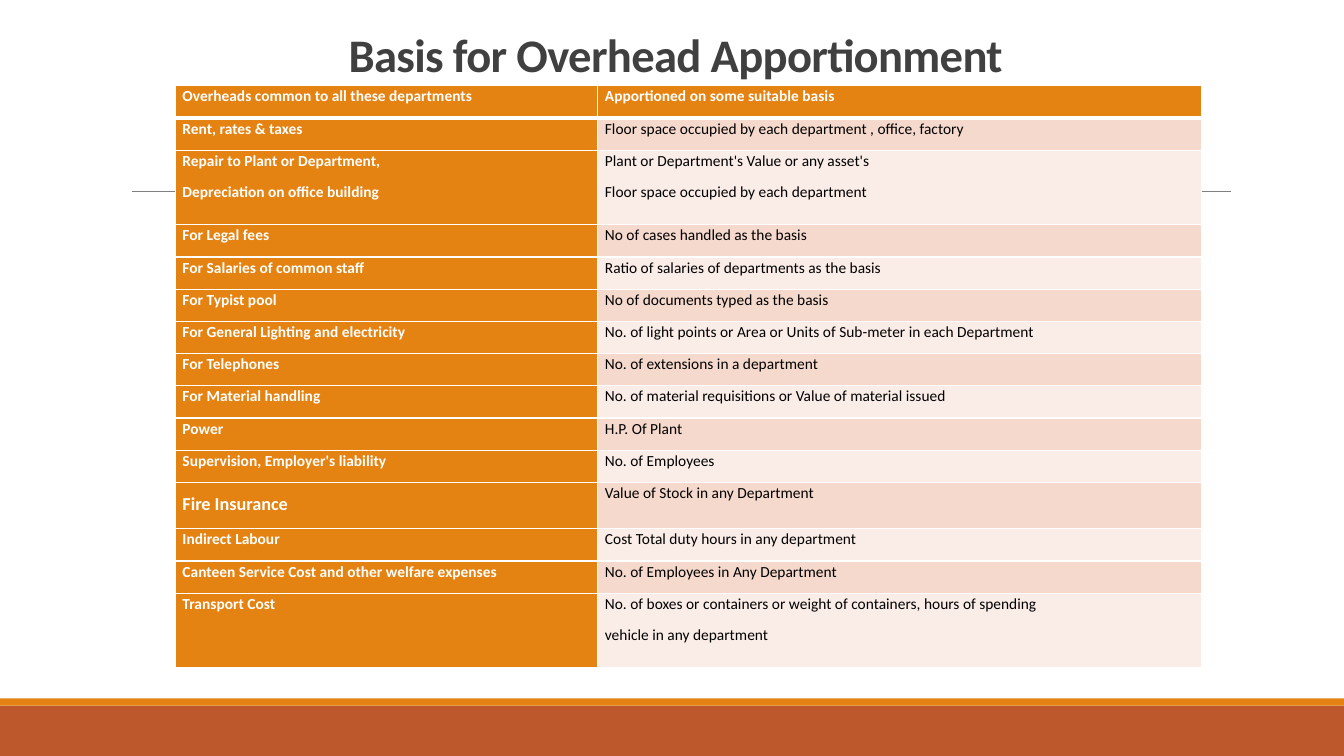
import pptx
import pptx.util
import pptx.dml.color
import pptx.enum.shapes
import pptx.enum.text
import pptx.oxml
import pptx.oxml.ns
import lxml.etree

Inches = pptx.util.Inches
Pt = pptx.util.Pt
PP_ALIGN = pptx.enum.text.PP_ALIGN
qn = pptx.oxml.ns.qn

COLORS = {
    "orange": "E48312", "rust": "BD582C", "rule": "808080", "title": "404040",
    "white": "FFFFFF", "black": "000000", "dark band": "F5D9CC", "light band": "FAEDE7",
}
FONT = "Calibri"

# Each row: height, left paragraphs, right paragraphs
ROWS = [
    (0.32, ["Overheads common to all these departments"], ["Apportioned on some suitable basis"]),
    (0.32, ["Rent, rates & taxes"], ["Floor space occupied by each department , office, factory"]),
    (0.74, ["Repair to Plant or Department,", "Depreciation on office building"],
     ["Plant or Department's Value or any asset's", "Floor space occupied by each department"]),
    (0.32, ["For Legal fees"], ["No of cases handled as the basis"]),
    (0.32, ["For Salaries of common staff"], ["Ratio of salaries of departments as the basis"]),
    (0.32, ["For Typist pool"], ["No of documents typed as the basis"]),
    (0.32, ["For General Lighting and electricity"],
     ["No. of light points or Area or Units of Sub-meter in each Department"]),
    (0.32, ["For Telephones"], ["No. of extensions in a department"]),
    (0.32, ["For Material handling"], ["No. of material requisitions or Value of material issued"]),
    (0.32, ["Power"], ["H.P. Of Plant"]),
    (0.32, ["Supervision, Employer's liability"], ["No. of Employees"]),
    (0.46, ["Fire Insurance"], ["Value of Stock in any Department"]),
    (0.32, ["Indirect Labour"], ["Cost Total duty hours in any department"]),
    (0.32, ["Canteen Service Cost and other welfare expenses"], ["No. of Employees in Any Department"]),
    (0.74, ["Transport Cost"],
     ["No. of boxes or containers or weight of containers, hours of spending",
      "vehicle in any department"]),
]


def rgb(name):
    return pptx.dml.color.RGBColor.from_string(COLORS[name])


def add_run(paragraph, text, size, color, bold):
    run = paragraph.add_run()
    run.text = text
    run.font.name = FONT
    run.font.size = Pt(size)
    run.font.bold = bold
    run.font.color.rgb = rgb(color)
    return run


presentation = pptx.Presentation()
presentation.slide_width = Inches(13.33)
presentation.slide_height = Inches(7.5)
slide = presentation.slides.add_slide(presentation.slide_layouts[6])

# Footer bands
for top, height, color in [(7, 0.5, "rust"), (6.93, 0.07, "orange")]:
    band = slide.shapes.add_shape(
        pptx.enum.shapes.MSO_SHAPE.RECTANGLE, 0, Inches(top), Inches(13.33), Inches(height))
    band.shadow.inherit = False
    band.fill.solid()
    band.fill.fore_color.rgb = rgb(color)
    band.line.fill.background()

# Rule behind the table
rule = slide.shapes.add_connector(
    pptx.enum.shapes.MSO_CONNECTOR.STRAIGHT, Inches(1.31), Inches(1.9), Inches(12.21), Inches(1.9))
rule.line.color.rgb = rgb("rule")
rule.line.width = Pt(0.5)
lxml.etree.SubElement(rule._element.spPr, qn("a:effectLst"))

# Title
title = slide.shapes.add_textbox(Inches(1.2), Inches(0.31), Inches(11), Inches(0.54))
title.text_frame.word_wrap = True
title.text_frame.vertical_anchor = pptx.enum.text.MSO_ANCHOR.BOTTOM
paragraph = title.text_frame.paragraphs[0]
paragraph.alignment = PP_ALIGN.CENTER
paragraph.line_spacing = 0.75
paragraph.space_after = Pt(6)
title_run = add_run(paragraph, "Basis for Overhead Apportionment", 33.3, "title", True)
title_run.font._element.set("spc", "-50")

# Table
table = slide.shapes.add_table(
    len(ROWS), 2, Inches(1.74), Inches(0.85), Inches(10.18), Inches(5.77)).table
for column, width in zip(table.columns, (4.19, 5.99)):
    column.width = Inches(width)

for row_index, (height, *row_texts) in enumerate(ROWS):
    table.rows[row_index].height = Inches(height)
    for column_index, lines in enumerate(row_texts):
        cell = table.cell(row_index, column_index)
        cell.margin_left = cell.margin_right = Inches(0.07)
        cell.margin_top = cell.margin_bottom = 0
        is_heading = row_index == 0 or column_index == 0
        band_color = "dark band" if row_index % 2 else "light band"
        cell.fill.solid()
        cell.fill.fore_color.rgb = rgb("orange" if is_heading else band_color)

        # The one enlarged label is Fire Insurance
        is_large = lines == ["Fire Insurance"]
        for line_index, text in enumerate(lines):
            frame = cell.text_frame
            paragraph = frame.add_paragraph() if line_index else frame.paragraphs[0]
            paragraph.alignment = PP_ALIGN.JUSTIFY
            paragraph.line_spacing = 1.5 if is_large else 1.07
            paragraph.space_after = Pt(8)
            add_run(paragraph, text, 13 if is_large else 11,
                    "white" if is_heading else "black", is_heading)

        # White borders, heavier under the header row
        properties = cell._tc.get_or_add_tcPr()
        for position, side in enumerate("LRTB"):
            heavy = (row_index, side) in [(0, "B"), (1, "T")]
            border = lxml.etree.Element(qn("a:ln" + side), w=str(Pt(3 if heavy else 1)))
            fill = lxml.etree.SubElement(border, qn("a:solidFill"))
            lxml.etree.SubElement(fill, qn("a:srgbClr"), val=COLORS["white"])
            properties.insert(position, border)

presentation.save("out.pptx")
